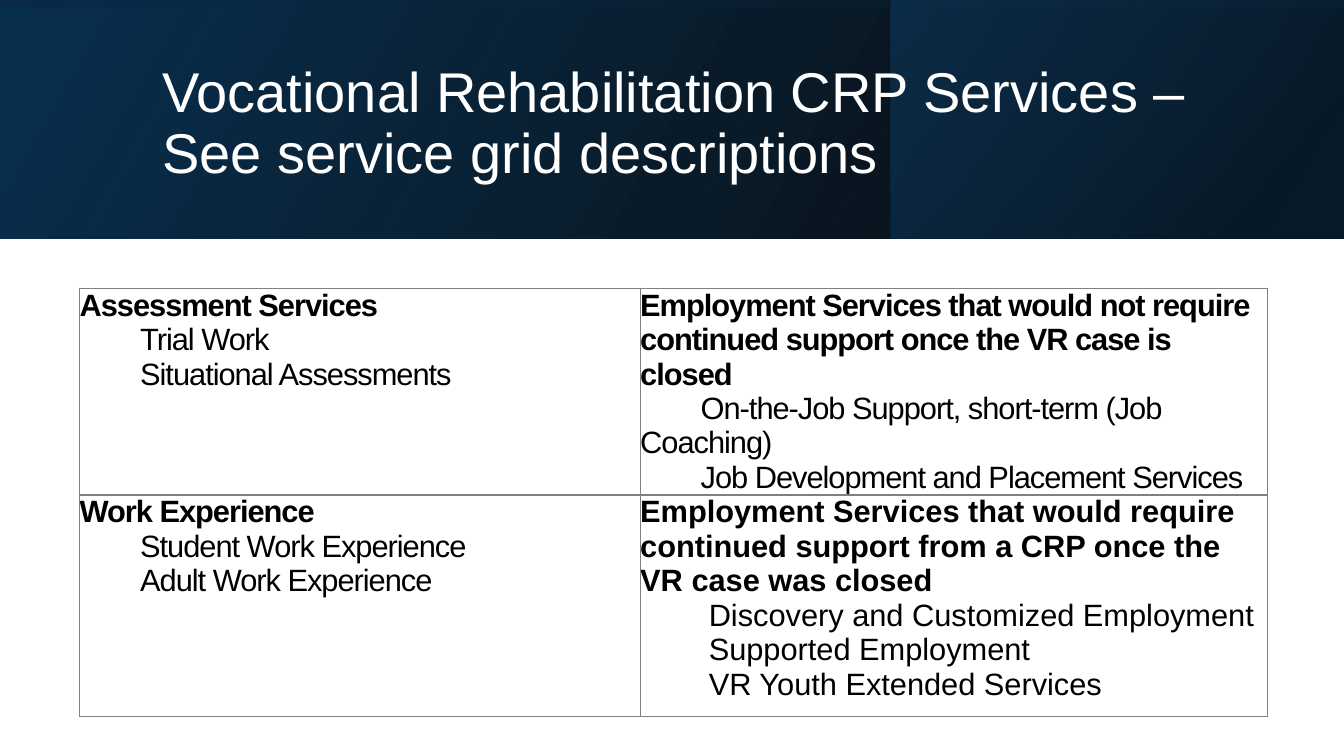
from lxml import etree
from pptx import Presentation, util as u
from pptx.dml.color import RGBColor
from pptx.enum import shapes, text
from pptx.oxml.ns import qn

W, H = 13.33, 7.5
COLORS = {"white": "FFFFFF", "black": "000000", "border": "808080",
          "navy": "0A3050", "deep": "072035", "blue": "0E406A"}
SERVICES = [
    [("Assessment Services", ["Trial Work", "Situational Assessments"], -0.7, 0.6),
     ("Employment Services that would not require continued support once the VR case is closed",
      ["On-the-Job Support, short-term (Job Coaching)",
       "Job Development and Placement Services"], -0.7, 0.6)],
    [("Work Experience", ["Student Work Experience", "Adult Work Experience"], -0.7, 0.6),
     ("Employment Services that would require continued support from a CRP once the VR case was closed",
      ["Discovery and Customized Employment", "Supported Employment",
       "VR Youth Extended Services"], 0, 0.68)],
]


def rgb(name):
    """Return the named colour."""
    return RGBColor.from_string(COLORS[name])


def style(target, values):
    """Set each attribute of the target from a dict."""
    for name, value in values.items():
        setattr(target, name, value)


def gradient_panel(s, box, angle, stops, rotation=0):
    """Draw a mirrored rectangle with a translucent gradient."""
    sp = s.shapes.add_shape(shapes.MSO_SHAPE.RECTANGLE, *map(u.Inches, box))
    sp.shadow.inherit = False
    sp.rotation = rotation
    sp.element.spPr.find(qn("a:xfrm")).set("flipH", "1")
    sp.line.fill.background()
    sp.fill.gradient()
    sp.fill.gradient_angle = angle
    for stop, (position, color, _) in zip(sp.fill.gradient_stops, stops):
        stop.position = position
        stop.color.rgb = rgb(color)
    for clr, (_, _, opacity) in zip(sp.element.spPr.iter(qn("a:srgbClr")), stops):
        etree.SubElement(clr, qn("a:alpha")).set("val", str(opacity * 1000))


def header(s, box, title):
    """Build the gradient band and the title over it."""
    x, y, w, h = box
    gradient_panel(s, box, 30, [(0, "black", 96), (1, "navy", 100)])
    gradient_panel(s, (x + w * 0.663, y, w * 0.337, h), 40,
                   [(0.19, "deep", 68), (1, "blue", 48)])
    gradient_panel(s, (x + (w - h) / 2, y + (h - w) / 2, h, w), 10,
                   [(0.23, "navy", 16), (0.99, "black", 45)], 270)
    sp = s.shapes.title
    sp.element.getparent().append(sp.element)
    style(sp, {"left": u.Inches(x + 1.51), "top": u.Inches(y + 0.38),
               "width": u.Inches(w - 2.7), "height": u.Inches(h - 0.65)})
    tf = sp.text_frame
    style(tf, {"word_wrap": True, "auto_size": text.MSO_AUTO_SIZE.NONE,
               "vertical_anchor": text.MSO_ANCHOR.MIDDLE})
    p = tf.paragraphs[0]
    style(p, {"alignment": text.PP_ALIGN.LEFT, "line_spacing": 0.9})
    r = p.add_run()
    r.text = title
    style(r.font, {"size": u.Pt(40), "name": "Arial"})
    r.font.color.rgb = rgb("white")


def border(cell):
    """Draw a thin line on all four sides of a cell."""
    tcPr = cell._tc.get_or_add_tcPr()
    for side in ("lnL", "lnR", "lnT", "lnB"):
        ln = etree.SubElement(tcPr, qn(f"a:{side}"), w=str(u.Pt(1)))
        fill = etree.SubElement(ln, qn("a:solidFill"))
        etree.SubElement(fill, qn("a:srgbClr"), val=COLORS["border"])


def service_cell(cell, heading, items, spacing, indent):
    """Write a bold heading and its first-line-indented services."""
    border(cell)
    cell.fill.background()
    style(cell, dict.fromkeys(
        ("margin_left", "margin_right", "margin_top", "margin_bottom"), 0))
    tf = cell.text_frame
    for i, line in enumerate([heading, *items]):
        p = tf.add_paragraph() if i else tf.paragraphs[0]
        if i:
            p._p.get_or_add_pPr().set("indent", str(u.Inches(indent)))
        r = p.add_run()
        r.text = line
        style(r.font, {"size": u.Pt(22), "name": "Arial", "bold": i == 0})
        r.font.color.rgb = rgb("black")
        r._r.get_or_add_rPr().set("spc", str(round(spacing * 100)))


def service_grid(s, box, col_shares, row_heights):
    """Build the table of services in the given box."""
    table = s.shapes.add_table(len(SERVICES), len(SERVICES[0]), *map(u.Inches, box)).table
    style(table, {"first_row": False, "horz_banding": False})
    for col, share in zip(table.columns, col_shares):
        col.width = u.Inches(box[2] * share)
    for row, height, services in zip(table.rows, row_heights, SERVICES):
        row.height = u.Inches(height)
        for cell, service in zip(row.cells, services):
            service_cell(cell, *service)


def main():
    """Build and save the slide."""
    prs = Presentation()
    style(prs, {"slide_width": u.Inches(W), "slide_height": u.Inches(H)})
    s = prs.slides.add_slide(prs.slide_layouts[5])
    header(s, (0, 0, W, 2.37),
           "Vocational Rehabilitation CRP Services – See service grid descriptions")
    service_grid(s, (0.79, 2.86, 11.78, 4.04), (0.472, 0.528), (1.84, 2.2))
    prs.save("out.pptx")


if __name__ == "__main__":
    main()
